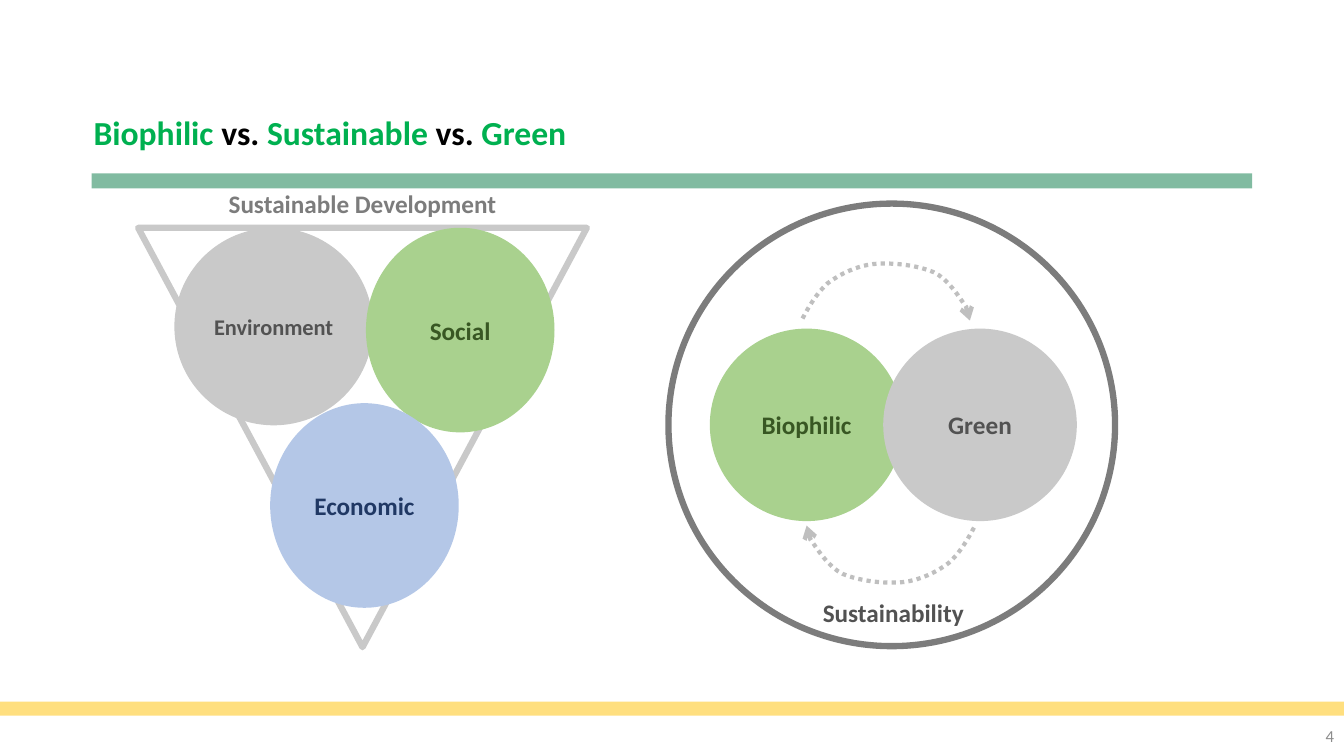
"""Builds the slide comparing biophilic, sustainable and green development."""
from lxml import etree
from pptx import Presentation
from pptx.dml.color import RGBColor
from pptx.enum.dml import MSO_LINE
from pptx.enum.shapes import MSO_SHAPE
from pptx.enum.text import MSO_ANCHOR, PP_ALIGN
from pptx.oxml.ns import qn
from pptx.util import Inches, Pt

RECT, OVAL, TRIANGLE = MSO_SHAPE.RECTANGLE, MSO_SHAPE.OVAL, MSO_SHAPE.ISOSCELES_TRIANGLE
LEFT, CENTER, RIGHT = PP_ALIGN.LEFT, PP_ALIGN.CENTER, PP_ALIGN.RIGHT
TOP, MIDDLE = MSO_ANCHOR.TOP, MSO_ANCHOR.MIDDLE
GREEN, BLACK, SILVER, GRAY, DARK = "00B050", "000000", "C9C9C9", "7C7C7C", "525252"
LEAF, FOREST, SKY, NAVY = "A9D18E", "385723", "B4C7E7", "203864"

prs = Presentation()
prs.slide_width, prs.slide_height = Inches(13.33), Inches(7.5)
COL, ROW = prs.slide_width / 1333, prs.slide_height / 750
slide = prs.slides.add_slide(prs.slide_layouts[6])
rgb = RGBColor.from_string


def add_shape(kind, x, y, w, h, fill=None, line=None):
    """Add a preset shape, placed in grid columns and rows."""
    s = slide.shapes.add_shape(kind, int(x * COL), int(y * ROW), int(w * COL), int(h * ROW))
    s.shadow.inherit = False
    if fill:
        s.fill.solid()
        s.fill.fore_color.rgb = rgb(fill)
    else:
        s.fill.background()
    if line:
        s.line.color.rgb = rgb(line)
        s.line.width = Pt(4.5)
    else:
        s.line.fill.background()
    return s


def write(s, runs, size, align=CENTER, anchor=MIDDLE, bold=True, wrap=True):
    """Write one paragraph of (text, colour) runs into a shape."""
    tf = s.text_frame
    tf.word_wrap, tf.vertical_anchor = wrap, anchor
    p = tf.paragraphs[0]
    p.alignment = align
    p.font.name, p.font.size, p.font.bold = "Calibri", Pt(size), bold
    for text, color in runs:
        r = p.add_run()
        r.text = text
        r.font.color.rgb = rgb(color)


for x, y, w, h, color in [(0, 696, 1333, 14, "FFC000"), (91, 172, 1151, 15, "047845")]:
    s = add_shape(RECT, x, y, w, h, color)
    fill_color = s.fill._xPr.find(qn("a:solidFill"))[0]
    etree.SubElement(fill_color, qn("a:alpha"), val="50000")

add_shape(TRIANGLE, 137, 226, 445, 416, line=SILVER).rotation = 180
add_shape(OVAL, 663, 202, 443, 439, line=GRAY)

circles = [
    ("Environment", 173, 226, 197, 196, SILVER, DARK, 16),
    ("Social", 363, 226, 187, 203, LEAF, FOREST, 18),
    ("Economic", 268, 400, 187, 203, SKY, NAVY, 18),
    ("Biophilic", 704, 326, 192, 191, LEAF, FOREST, 18),
    ("Green", 876, 326, 192, 191, SILVER, DARK, 18),
]
for text, x, y, w, h, fill, color, size in circles:
    write(add_shape(OVAL, x, y, w, h, fill), [(text, color)], size, wrap=False)

title = [("Biophilic", GREEN), (" vs. ", BLACK), ("Sustainable", GREEN),
         (" vs. ", BLACK), ("Green", GREEN)]
labels = [
    (83, 106, 955, 50, title, 24, LEFT, TOP, True),
    (137, 182, 445, 37, [("Sustainable Development", GRAY)], 18, CENTER, TOP, True),
    (800, 588, 172, 36, [("Sustainability", DARK)], 18, CENTER, TOP, True),
    (1230, 710, 103, 39, [("4", "8C8C8C")], 12, RIGHT, MIDDLE, False),
]
for x, y, w, h, runs, size, align, anchor, bold in labels:
    s = slide.shapes.add_textbox(int(x * COL), int(y * ROW), int(w * COL), int(h * ROW))
    write(s, runs, size, align, anchor, bold)

arc_start = (796, 316)
arc_curves = [
    [(803, 303), (810, 291), (821, 281)],
    [(833, 272), (849, 264), (866, 262)],
    [(884, 260), (910, 263), (926, 270)],
    [(941, 277), (952, 296), (958, 304)],
    [(964, 312), (959, 311), (962, 318)],
]
STEPS = 8
points, last = [], arc_start
for curve in arc_curves:
    for step in range(1, STEPS + 1):
        t = step / STEPS
        weights = [(1 - t) ** 3, 3 * t * (1 - t) ** 2, 3 * t * t * (1 - t), t ** 3]
        points.append([sum(k * pt[axis] for k, pt in zip(weights, [last, *curve]))
                       for axis in (0, 1)])
    last = curve[-1]

for dx, dy, angle in [(0, 0, 0), (4, 260, 180)]:
    x0, y0 = arc_start
    builder = slide.shapes.build_freeform(int((x0 + dx) * COL), int((y0 + dy) * ROW))
    builder.add_line_segments([(int((x + dx) * COL), int((y + dy) * ROW)) for x, y in points],
                              close=False)
    s = builder.convert_to_shape()
    s.shadow.inherit = False
    s.rotation = angle
    s.fill.background()
    s.line.color.rgb = rgb("BFBFBF")
    s.line.width = Pt(3)
    s.line.dash_style = MSO_LINE.ROUND_DOT
    etree.SubElement(s.line._get_or_add_ln(), qn("a:tailEnd"), type="arrow")

prs.save("out.pptx")
